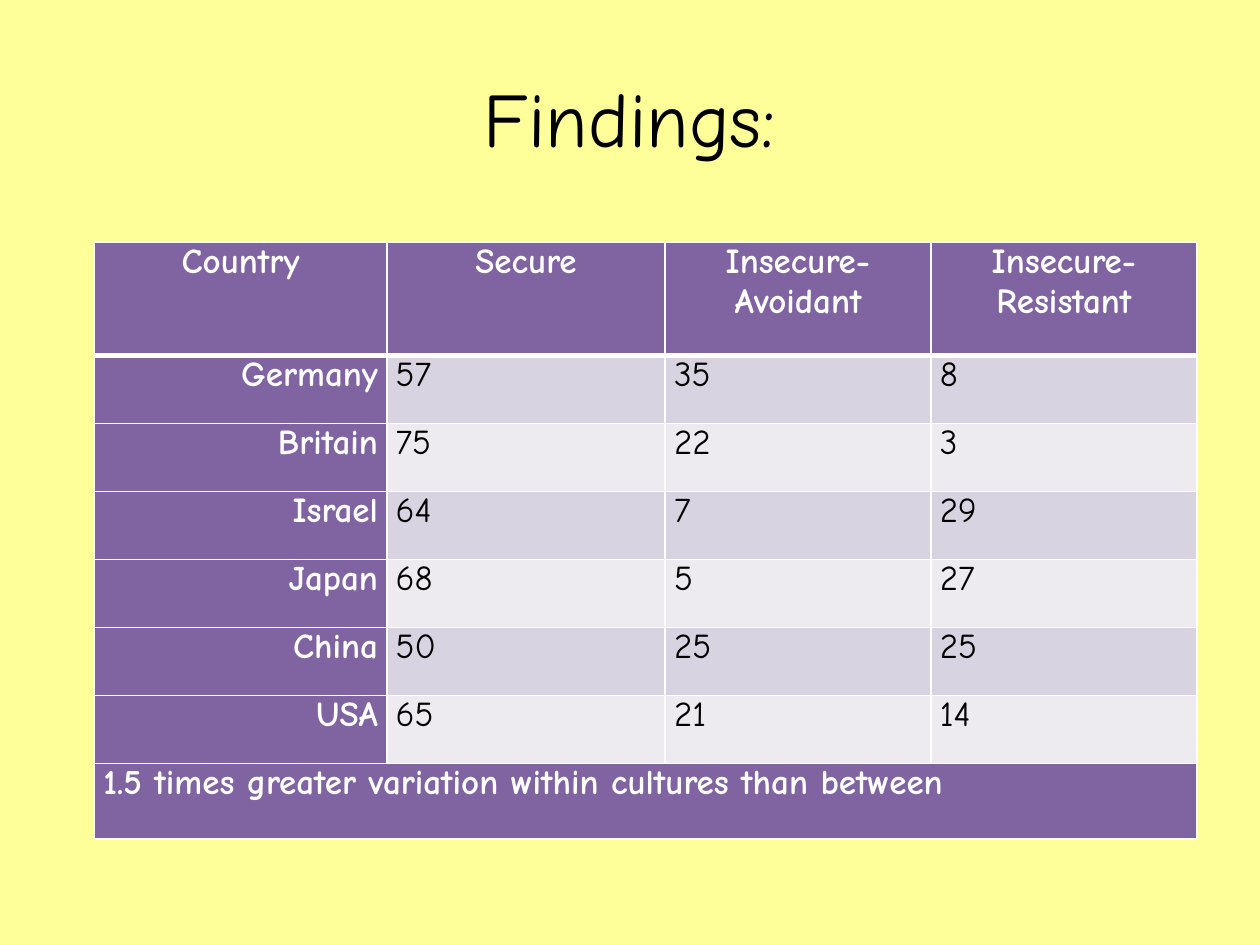
from lxml.etree import SubElement
from pptx import Presentation
from pptx.dml.color import RGBColor
from pptx.enum.text import MSO_ANCHOR, PP_ALIGN
from pptx.oxml.ns import qn
from pptx.util import Inches, Pt

FONT = "Comic Neue"
PURPLE, WHITE, BLACK = "8064A2", "FFFFFF", "000000"
BANDS = ["D8D3E0", "EDEAF0"]


def format_text(paragraph, color, size, bold, align):
    values = {"name": FONT, "size": Pt(size), "bold": bold}
    for attribute, value in values.items():
        setattr(paragraph.font, attribute, value)
    paragraph.font.color.rgb = RGBColor.from_string(color)
    paragraph.alignment = align


def add_border(cell, side, width):
    """Draw a white line on one side of a cell: L, R, T or B."""
    line = SubElement(cell._tc.get_or_add_tcPr(), qn(f"a:ln{side}"), w=str(Pt(width)))
    fill = SubElement(line, qn("a:solidFill"))
    SubElement(fill, qn("a:srgbClr"), val=WHITE)


prs = Presentation()
prs.slide_width, prs.slide_height = Inches(10), Inches(7.5)
slide = prs.slides.add_slide(prs.slide_layouts[5])
slide.background.fill.solid()
slide.background.fill.fore_color.rgb = RGBColor.from_string("FFFF99")

title = slide.shapes.title
title.left, title.top = Inches(0.5), Inches(0.3)
title.width, title.height = Inches(9), Inches(1.25)
title.text_frame.text = "Findings:"
title.text_frame.vertical_anchor = MSO_ANCHOR.MIDDLE
format_text(title.text_frame.paragraphs[0], BLACK, 44, False, PP_ALIGN.CENTER)

findings = [
    ["Country", "Secure", "Insecure-Avoidant", "Insecure-Resistant"],
    ["Germany", 57, 35, 8],
    ["Britain", 75, 22, 3],
    ["Israel", 64, 7, 29],
    ["Japan", 68, 5, 27],
    ["China", 50, 25, 25],
    ["USA", 65, 21, 14],
    ["1.5 times greater variation within cultures than between", "", "", ""],
]
column_widths = [2.32, 2.21, 2.11, 2.11]
row_heights = [0.9] + [0.54] * 6 + [0.6]
summary_row = len(findings) - 1

table = slide.shapes.add_table(
    len(findings), len(column_widths), Inches(0.75), Inches(1.92),
    Inches(sum(column_widths)), Inches(sum(row_heights))).table
for column, width in zip(table.columns, column_widths):
    column.width = Inches(width)
for row, height in zip(table.rows, row_heights):
    row.height = Inches(height)
table.cell(summary_row, 0).merge(table.cell(summary_row, 3))

margins = {"margin_left": Inches(0.07), "margin_right": Inches(0.07),
           "margin_top": 0, "margin_bottom": 0}
for r, finding in enumerate(findings):
    for c, entry in enumerate(finding):
        cell = table.cell(r, c)
        for attribute, value in margins.items():
            setattr(cell, attribute, value)

        for side in "LRTB":
            under_header = (r, side) in [(0, "B"), (1, "T")]
            add_border(cell, side, 3 if under_header else 1)

        heading = r in (0, summary_row) or c == 0
        cell.fill.solid()
        cell.fill.fore_color.rgb = RGBColor.from_string(
            PURPLE if heading else BANDS[(r - 1) % 2])

        if r == 0:
            align = PP_ALIGN.CENTER
        elif c == 0 and r != summary_row:
            align = PP_ALIGN.RIGHT
        else:
            align = PP_ALIGN.LEFT
        if not cell.is_spanned:
            cell.text = str(entry)
            format_text(cell.text_frame.paragraphs[0],
                        WHITE if heading else BLACK, 20, heading, align)

prs.save("out.pptx")
